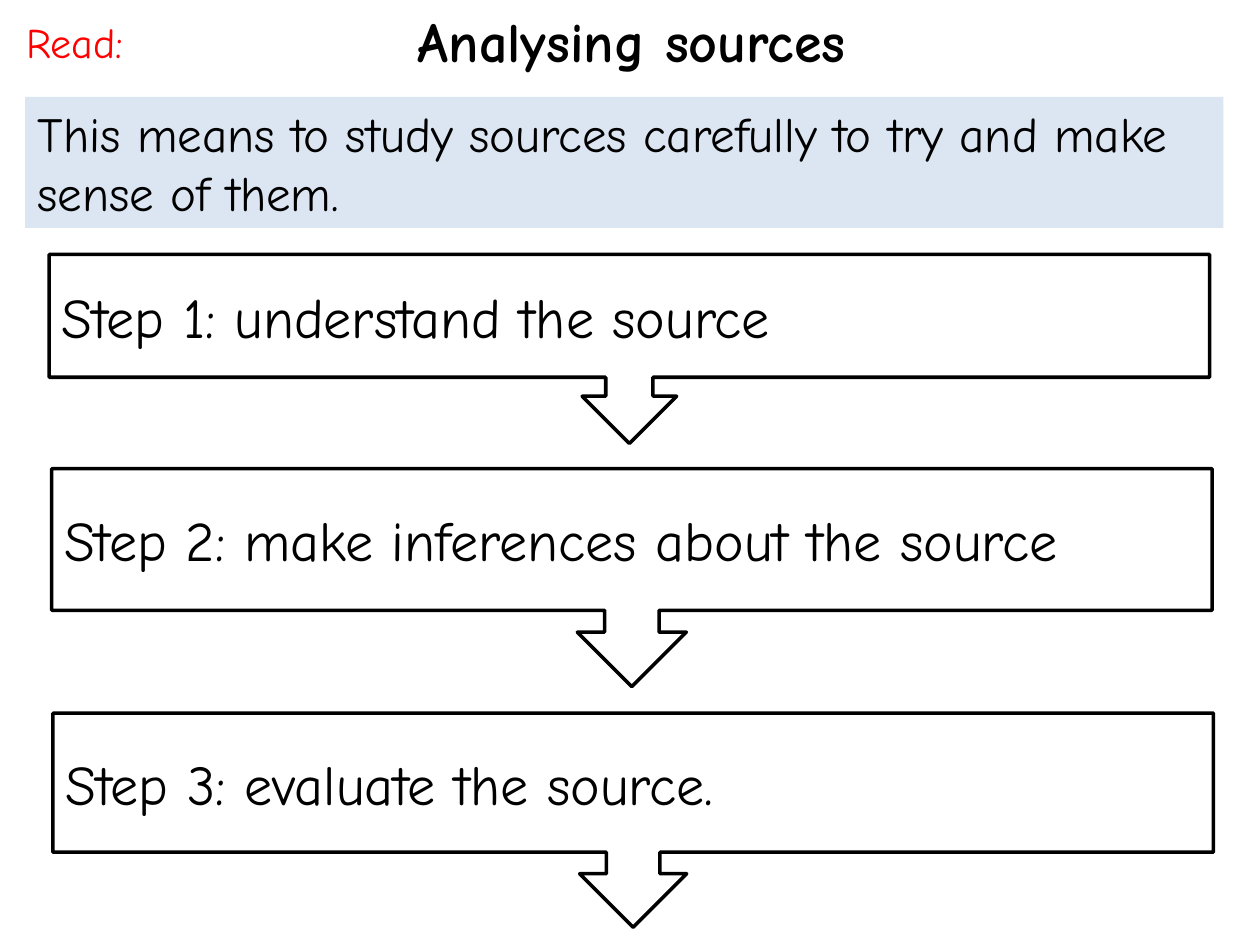
import dataclasses

import pptx
import pptx.dml.color
import pptx.enum.shapes
import pptx.enum.text
import pptx.shapes.autoshape
import pptx.slide
import pptx.util

Inches = pptx.util.Inches
Alignment = pptx.enum.text.PP_ALIGN
Anchor = pptx.enum.text.MSO_ANCHOR
ShapeKind = pptx.enum.shapes.MSO_SHAPE

COLORS = {"ink": "000000", "paper": "FFFFFF", "band": "DCE6F2", "label": "FF0000"}
FONT_NAME = "Comic Neue"


@dataclasses.dataclass(frozen=True)
class Box:
    left: float
    top: float
    width: float
    height: float

    def lengths(self) -> tuple:
        return tuple(Inches(value) for value in dataclasses.astuple(self))


@dataclasses.dataclass(frozen=True)
class Step:
    text: str
    box: Box


STEPS = [
    Step("Step 1: understand the source", Box(0.39, 2.02, 9.21, 1.5)),
    Step("Step 2: make inferences about the source", Box(0.41, 3.72, 9.21, 1.73)),
    Step("Step 3: evaluate the source.", Box(0.42, 5.66, 9.21, 1.7)),
]


def color(name: str) -> pptx.dml.color.RGBColor:
    return pptx.dml.color.RGBColor.from_string(COLORS[name])


def write_text(shape: pptx.shapes.autoshape.Shape, text: str, *, size: int,
               ink: str = "ink", bold: bool = False,
               alignment: Alignment = Alignment.LEFT,
               anchor: Anchor = Anchor.TOP) -> None:
    frame = shape.text_frame
    frame.word_wrap = True
    frame.auto_size = pptx.enum.text.MSO_AUTO_SIZE.NONE
    frame.vertical_anchor = anchor
    paragraph = frame.paragraphs[0]
    paragraph.alignment = alignment
    run = paragraph.add_run()
    run.text = text
    run.font.name = FONT_NAME
    run.font.size = pptx.util.Pt(size)
    run.font.bold = bold
    run.font.color.rgb = color(ink)


def add_filled_shape(slide: pptx.slide.Slide, kind: ShapeKind, box: Box,
                     fill: str) -> pptx.shapes.autoshape.Shape:
    shape = slide.shapes.add_shape(kind, *box.lengths())
    shape.shadow.inherit = False
    shape.fill.solid()
    shape.fill.fore_color.rgb = color(fill)
    return shape


def add_title(slide: pptx.slide.Slide) -> None:
    title = slide.shapes.title
    title.left, title.top, title.width, title.height = Box(0.41, 0, 9.21, 0.64).lengths()
    write_text(title, "Analysing sources", size=32, bold=True, alignment=Alignment.CENTER)


def add_definition(slide: pptx.slide.Slide) -> None:
    band = add_filled_shape(slide, ShapeKind.RECTANGLE, Box(0.2, 0.77, 9.51, 1.04), "band")
    band.line.fill.background()
    write_text(band, "This means to study sources carefully to try and make sense of them.",
               size=28)


def add_step(slide: pptx.slide.Slide, step: Step) -> None:
    callout = add_filled_shape(slide, ShapeKind.DOWN_ARROW_CALLOUT, step.box, "paper")
    callout.line.color.rgb = color("ink")
    callout.line.width = pptx.util.Pt(2)
    write_text(callout, step.text, size=32, anchor=Anchor.MIDDLE)


def add_read_label(slide: pptx.slide.Slide) -> None:
    label = slide.shapes.add_textbox(*Box(0.11, 0.08, 9.53, 0.5).lengths())
    write_text(label, "Read:", size=24, ink="label")


def main() -> None:
    presentation = pptx.Presentation()
    presentation.slide_width = Inches(10)
    presentation.slide_height = Inches(7.5)
    slide = presentation.slides.add_slide(presentation.slide_layouts.get_by_name("Title Only"))
    add_title(slide)
    add_definition(slide)
    for step in STEPS:
        add_step(slide, step)
    add_read_label(slide)
    presentation.save("out.pptx")


if __name__ == "__main__":
    main()
